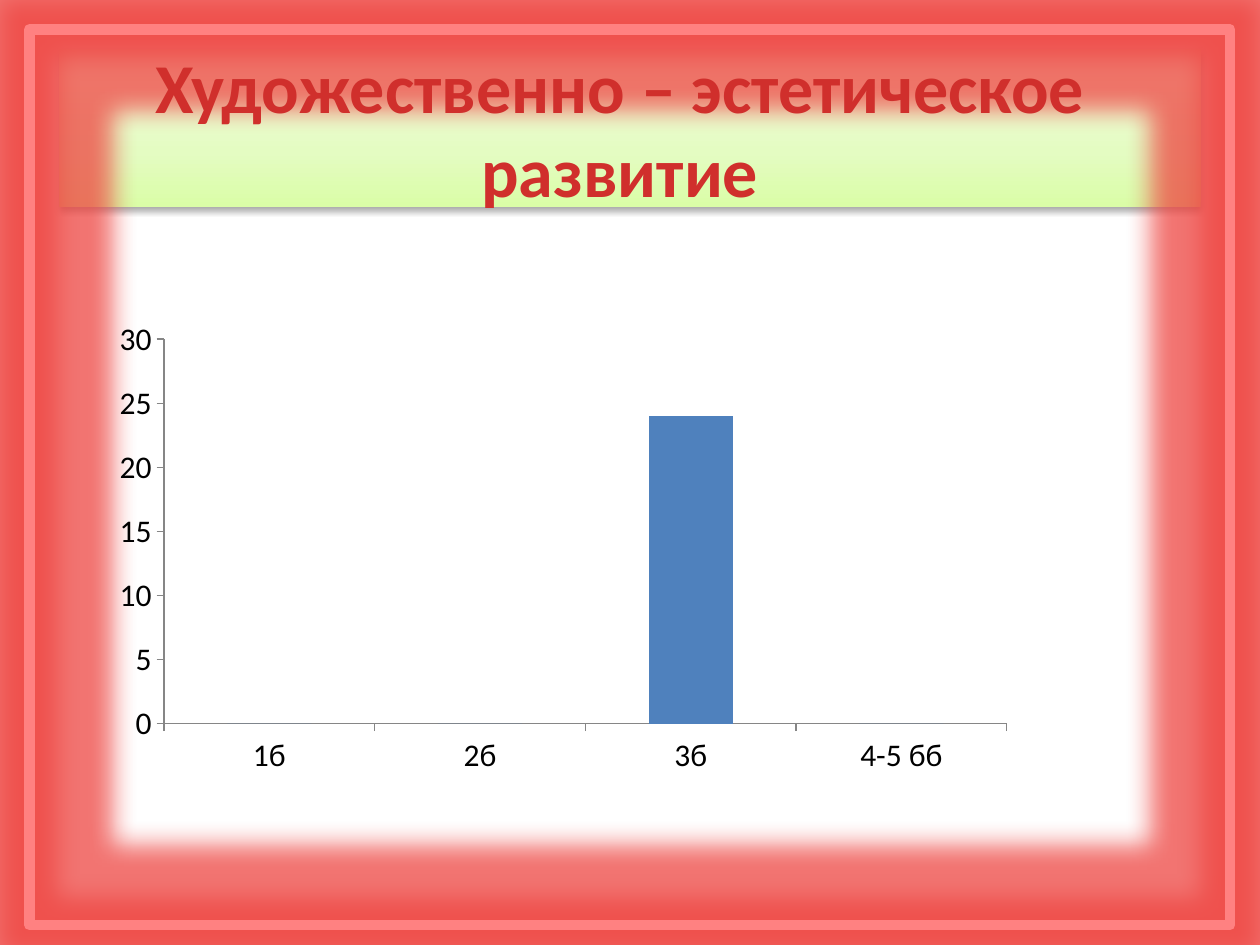
from lxml import etree
from pptx import Presentation
from pptx.chart.data import CategoryChartData
from pptx.dml.color import RGBColor
from pptx.enum.chart import XL_CHART_TYPE, XL_TICK_MARK
from pptx.enum.shapes import MSO_SHAPE
from pptx.enum.text import MSO_ANCHOR, PP_ALIGN
from pptx.oxml import parse_xml
from pptx.oxml.ns import nsdecls, qn
from pptx.util import Inches, Pt

RECTANGLE = MSO_SHAPE.RECTANGLE
STACKED = XL_CHART_TYPE.COLUMN_STACKED
TICK_CROSS, TICK_OUTSIDE = XL_TICK_MARK.CROSS, XL_TICK_MARK.OUTSIDE
MIDDLE, CENTER = MSO_ANCHOR.MIDDLE, PP_ALIGN.CENTER

FONT = "Calibri"
WIDTH, HEIGHT = Inches(10), Inches(7.5)
COLORS = {
    "background": "FFFFFF", "frame": "FF8181", "glow": "EE4642",
    "shadow": "000000", "bar": "4F81BD", "axis": "868686", "text": "000000",
}
BANNER_STOPS = [(0, "DAFDA7"), (35, "E4FCC2"), (100, "F5FFE7")]
TITLE_STOPS = [(0, "FC7C7A"), (75, "D02F2C"), (100, "C70500")]

# Boxes: left, top, width, height in percent of the slide
BANNER_BOX = (4.7, 5.2, 90.6, 16.67)
FRAME_BOX = (2.33, 3.1, 95.3, 94.8)
TITLE_BOX = (6.7, 3.87, 85, 19.33)
CHART_BOX = (6.7, 25.87, 73.5, 56.93)
PLOT_SHARES = {"x": 0.086, "y": 0.176, "w": 0.91, "h": 0.715}


def rgb(name):
    return RGBColor.from_string(COLORS[name])


def place(box):
    """Turn a box in percent of the slide into lengths."""
    return [int(share * side / 100)
            for share, side in zip(box, (WIDTH, HEIGHT, WIDTH, HEIGHT))]


def gradient(stops, angle):
    marks = "".join(
        f'<a:gs pos="{position * 1000}"><a:srgbClr val="{color}"/></a:gs>'
        for position, color in stops)
    return parse_xml(
        f'<a:gradFill {nsdecls("a")} rotWithShape="1"><a:gsLst>{marks}</a:gsLst>'
        f'<a:lin ang="{angle * 60000}" scaled="0"/></a:gradFill>')


def set_effect(shape, effect, color, alpha, **lengths):
    """Give the shape one glow or shadow."""
    shape.shadow.inherit = False
    effects = shape._element.spPr.find(qn("a:effectLst"))
    attributes = {key: str(int(value)) for key, value in lengths.items()}
    node = etree.SubElement(effects, qn(f"a:{effect}"), attributes)
    tint = etree.SubElement(node, qn("a:srgbClr"), val=COLORS[color])
    etree.SubElement(tint, qn("a:alpha"), val=str(alpha * 1000))


def add_banner(slide, box):
    banner = slide.shapes.add_shape(RECTANGLE, *place(box))
    banner.line.fill.background()
    banner._element.spPr.find(qn("a:prstGeom")).addnext(gradient(BANNER_STOPS, 270))
    set_effect(banner, "outerShdw", "shadow", 32,
               blurRad=Pt(3.5), dist=Pt(2.2), dir=90 * 60000)


def add_frame(slide, box):
    frame = slide.shapes.add_shape(RECTANGLE, *place(box))
    frame.fill.background()
    frame.line.color.rgb = rgb("frame")
    frame.line.width = Pt(6)
    set_effect(frame, "glow", "glow", 75, rad=Inches(0.4))


def add_title(slide, box, text):
    text_frame = slide.shapes.add_textbox(*place(box)).text_frame
    text_frame.word_wrap = True
    text_frame.vertical_anchor = MIDDLE
    paragraph = text_frame.paragraphs[0]
    paragraph.alignment = CENTER
    paragraph.font.name = FONT
    paragraph.font.size = Pt(40)
    paragraph.font.bold = True
    run = paragraph.add_run()
    run.text = text
    run._r.get_or_add_rPr().insert(0, gradient(TITLE_STOPS, 90))


def set_plot_layout(chart):
    """Fix the inner plot area inside the chart."""
    plot_area = chart._chartSpace.chart.plotArea
    for layout in plot_area.findall(qn("c:layout")):
        plot_area.remove(layout)
    shares = "".join(f'<c:{key} val="{value}"/>' for key, value in PLOT_SHARES.items())
    plot_area.insert(0, parse_xml(
        f'<c:layout {nsdecls("c")}><c:manualLayout><c:layoutTarget val="inner"/>'
        f'<c:xMode val="edge"/><c:yMode val="edge"/>{shares}'
        '</c:manualLayout></c:layout>'))


def add_score_chart(slide, box, categories, values):
    data = CategoryChartData()
    data.categories = categories
    data.add_series("Series 1", values)
    chart = slide.shapes.add_chart(STACKED, *place(box), data).chart
    chart.has_legend = False
    chart.has_title = False
    chart.font.name = FONT
    chart.font.size = Pt(18)
    chart.font.color.rgb = rgb("text")
    set_plot_layout(chart)

    # Columns
    plot = chart.plots[0]
    plot.vary_by_categories = False
    plot.gap_width = 150
    plot.overlap = 100
    fill = plot.series[0].format.fill
    fill.solid()
    fill.fore_color.rgb = rgb("bar")

    # Axes
    for axis in (chart.category_axis, chart.value_axis):
        axis.has_major_gridlines = False
        axis.major_tick_mark = TICK_OUTSIDE
        axis.format.line.color.rgb = rgb("axis")
        axis.format.line.width = Pt(0.75)
    chart.value_axis.minimum_scale = 0
    chart.value_axis.maximum_scale = 30
    chart.value_axis.major_unit = 5


def main():
    presentation = Presentation()
    presentation.slide_width, presentation.slide_height = WIDTH, HEIGHT
    slide = presentation.slides.add_slide(presentation.slide_layouts[6])
    slide.background.fill.solid()
    slide.background.fill.fore_color.rgb = rgb("background")

    add_banner(slide, BANNER_BOX)
    add_frame(slide, FRAME_BOX)
    add_title(slide, TITLE_BOX, "Художественно – эстетическое развитие")
    add_score_chart(slide, CHART_BOX, ["1б", "2б", "3б", "4-5 бб"], [0, 0, 24, 0])
    presentation.save("out.pptx")


if __name__ == "__main__":
    main()
